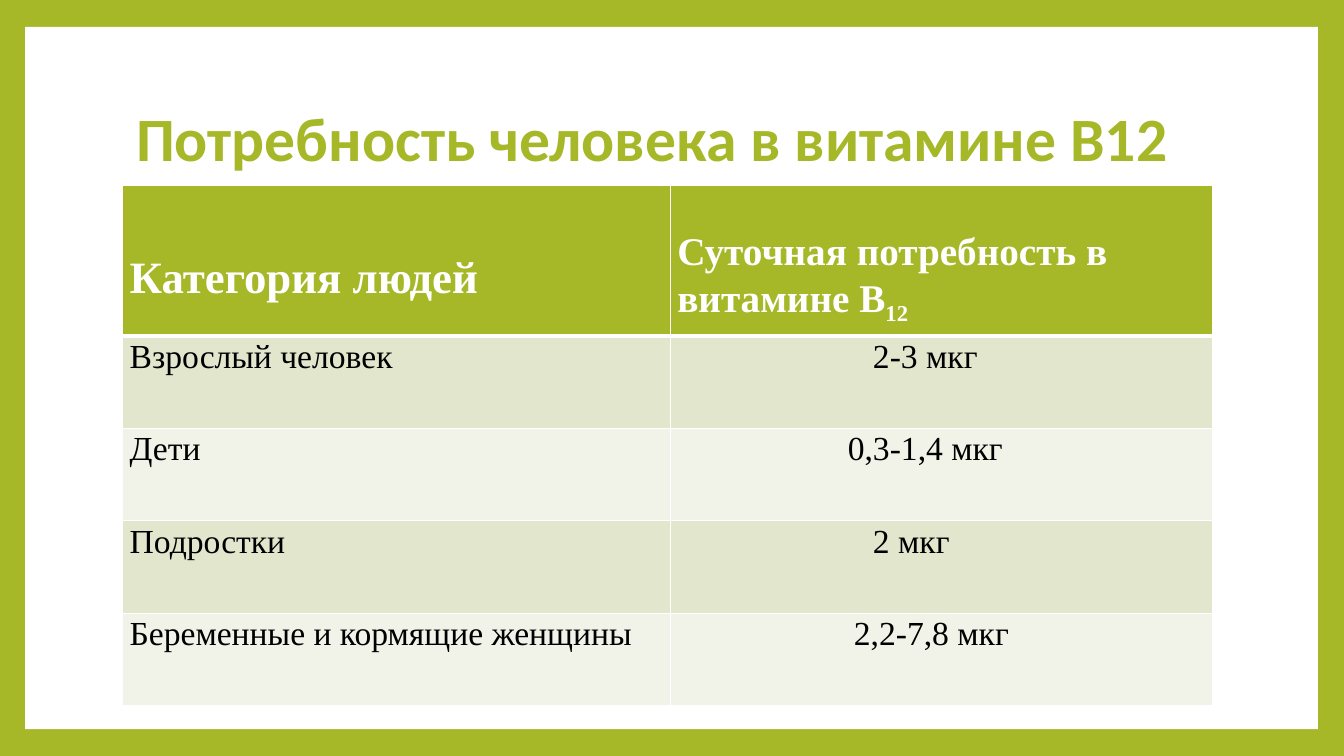
from dataclasses import dataclass

from lxml import etree
from pptx import Presentation
from pptx.dml.color import RGBColor
from pptx.enum.shapes import MSO_SHAPE
from pptx.enum.text import MSO_ANCHOR, MSO_AUTO_SIZE, PP_ALIGN
from pptx.oxml.ns import qn
from pptx.util import Inches, Pt

RECTANGLE = MSO_SHAPE.RECTANGLE
MIDDLE = MSO_ANCHOR.MIDDLE
TOP = MSO_ANCHOR.TOP
LEFT = PP_ALIGN.LEFT
NO_AUTOFIT = MSO_AUTO_SIZE.NONE
TITLE_ONLY = 5

GRID_COLUMNS = 16
GRID_ROWS = 9


@dataclass(frozen=True)
class Theme:
    accent: str = "A6B727"
    light: str = "FFFFFF"
    dark: str = "000000"
    bands: tuple = ("E1E6CD", "F1F3E8")
    title_font: str = "Calibri"
    table_font: str = "Times New Roman"
    title_size: int = 44
    category_size: int = 32
    need_size: int = 28
    body_size: int = 24
    line_spacing: float = 1.07
    border: int = 1
    header_border: int = 3
    cell_margin: float = 0.07
    header_drop: float = 0.32


class SlideBuilder:
    def __init__(self, presentation, theme):
        self.theme = theme
        self.column = presentation.slide_width / GRID_COLUMNS
        self.row = presentation.slide_height / GRID_ROWS
        self.slide = presentation.slides.add_slide(presentation.slide_layouts[TITLE_ONLY])

    def box(self, left, top, width, height):
        return (int(left * self.column), int(top * self.row),
                int(width * self.column), int(height * self.row))

    def paint(self, fill, color):
        fill.solid()
        fill.fore_color.rgb = RGBColor.from_string(color)

    def style(self, paragraph, name, size, color, bold):
        paragraph.alignment = LEFT
        font = paragraph.font
        font.name, font.size, font.bold = name, Pt(size), bold
        font.color.rgb = RGBColor.from_string(color)

    def background(self):
        self.paint(self.slide.background.fill, self.theme.accent)

    def panel(self, *place):
        panel = self.slide.shapes.add_shape(RECTANGLE, *self.box(*place))
        panel.shadow.inherit = False
        self.paint(panel.fill, self.theme.light)
        panel.line.fill.background()

    def title(self, text, *place):
        title = self.slide.shapes.title
        title.left, title.top, title.width, title.height = self.box(*place)
        frame = title.text_frame
        frame.text = text
        frame.auto_size = NO_AUTOFIT
        frame.vertical_anchor = MIDDLE
        paragraph = frame.paragraphs[0]
        paragraph.line_spacing = 0.9
        self.style(paragraph, self.theme.title_font, self.theme.title_size,
                   self.theme.accent, True)
        shape_tree = title.element.getparent()
        shape_tree.append(title.element)

    def borders(self, cell, top, bottom):
        properties = cell._tc.get_or_add_tcPr()
        widths = {"a:lnL": self.theme.border, "a:lnR": self.theme.border,
                  "a:lnT": top, "a:lnB": bottom}
        for tag, width in widths.items():
            line = etree.SubElement(properties, qn(tag), w=str(Pt(width)))
            fill = etree.SubElement(line, qn("a:solidFill"))
            etree.SubElement(fill, qn("a:srgbClr"), val=self.theme.light)

    def cell(self, cell, text, size, row_index, indent=0, subscript=""):
        theme = self.theme
        header = row_index == 0
        self.borders(cell, theme.header_border if row_index == 1 else theme.border,
                     theme.header_border if header else theme.border)
        self.paint(cell.fill, theme.accent if header else theme.bands[(row_index - 1) % 2])
        cell.margin_left = cell.margin_right = Inches(theme.cell_margin)
        cell.margin_top = Inches(theme.header_drop if header else 0)
        cell.margin_bottom = 0
        cell.vertical_anchor = MIDDLE if header else TOP
        paragraph = cell.text_frame.paragraphs[0]
        paragraph.add_run().text = text
        paragraph.line_spacing = theme.line_spacing
        self.style(paragraph, theme.table_font, size,
                   theme.light if header else theme.dark, header)
        if indent:
            properties = paragraph._p.get_or_add_pPr()
            properties.set("marL", str(Inches(indent)))
            properties.set("indent", "0")
        if subscript:
            run = paragraph.add_run()
            run.text = subscript
            run._r.get_or_add_rPr().set("baseline", "-25000")

    def needs_table(self, left, top, widths, header_height, row_height, headers, needs):
        theme = self.theme
        heights = [header_height] + [row_height] * len(needs)
        place = self.box(left, top, sum(widths), sum(heights))
        table = self.slide.shapes.add_table(len(heights), len(widths), *place).table
        for column, width in zip(table.columns, widths):
            column.width = int(width * self.column)
        for row, height in zip(table.rows, heights):
            row.height = int(height * self.row)
        category, need, subscript = headers
        self.cell(table.cell(0, 0), category, theme.category_size, 0)
        self.cell(table.cell(0, 1), need, theme.need_size, 0, subscript=subscript)
        for index, (group, amount, indent) in enumerate(needs, start=1):
            self.cell(table.cell(index, 0), group, theme.body_size, index)
            self.cell(table.cell(index, 1), amount, theme.body_size, index, indent)


def main():
    presentation = Presentation()
    presentation.slide_width = Inches(13.33)
    presentation.slide_height = Inches(7.5)

    builder = SlideBuilder(presentation, Theme())
    builder.background()
    builder.panel(0.3, 0.32, 15.39, 8.36)
    builder.title("Потребность человека в витамине B12", 1.5, 0.8, 12.96, 1.78)
    builder.needs_table(
        1.46, 2.21, (6.52, 6.46), 1.79, 1.1,
        ("Категория людей", "Суточная потребность в витамине B", "12"),
        [
            ("Взрослый человек", "2-3 мкг", 1.94),
            ("Дети", "0,3-1,4 мкг", 1.69),
            ("Подростки", "2 мкг", 1.94),
            ("Беременные и кормящие женщины", "2,2-7,8 мкг", 1.75),
        ],
    )
    presentation.save("out.pptx")


if __name__ == "__main__":
    main()
